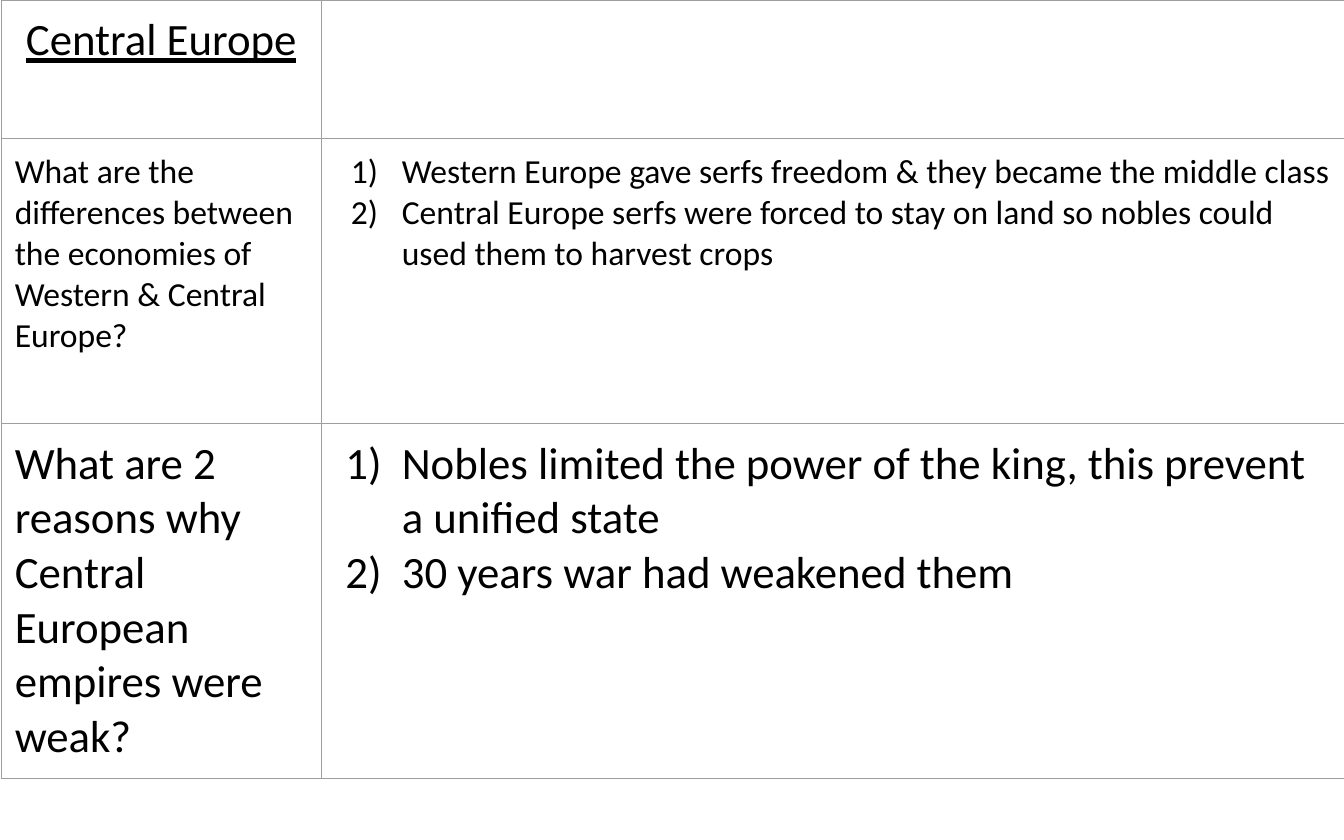
"""Build a study-notes slide about Central Europe."""
from lxml import etree
from pptx import Presentation
from pptx import util as u
from pptx.dml.color import RGBColor
from pptx.enum import text
from pptx.oxml.ns import qn

FONT = "Calibri"
INK = "000000"
RULE = "9E9E9E"
COLUMN_WIDTHS = [2.38, 7.64]
ROW_HEIGHTS = [1.03, 2.12, 2.46]
NOTES = [
    (
        "What are the differences between the economies of Western & Central Europe?",
        [
            "Western Europe gave serfs freedom & they became the middle class",
            "Central Europe serfs were forced to stay on land so nobles could used them to harvest crops",
        ],
        18,
        0.38,
    ),
    (
        "What are 2 reasons why Central European empires were weak?",
        [
            "Nobles limited the power of the king, this prevent a unified state",
            "30 years war had weakened them",
        ],
        24,
        0.42,
    ),
]


def color(code):
    """Turn a hex string into a colour."""
    return RGBColor.from_string(code)


def write(para, words, size=18, underline=False, align=text.PP_ALIGN.LEFT):
    """Put formatted words into a paragraph."""
    para.alignment = align
    span = para.add_run()
    span.text = words
    span.font.name = FONT
    span.font.size = u.Pt(size)
    span.font.underline = underline
    span.font.color.rgb = color(INK)


def number(para, hang):
    """Give a paragraph an automatic number with a hanging indent."""
    props = para._p.get_or_add_pPr()
    props.set("marL", str(u.Inches(0.5)))
    props.set("indent", str(-u.Inches(hang)))
    etree.SubElement(props, qn("a:buFont"), typeface=FONT)
    etree.SubElement(props, qn("a:buAutoNum"), type="arabicParenR")


def write_list(cell, items, size, hang):
    """Fill a cell with a numbered list."""
    frame = cell.text_frame
    for index, item in enumerate(items):
        para = frame.add_paragraph() if index else frame.paragraphs[0]
        write(para, item, size=size)
        number(para, hang)


def style_cell(cell):
    """Set the margins, borders and empty fill of a cell."""
    cell.margin_left = cell.margin_right = u.Inches(0.1)
    cell.margin_top = cell.margin_bottom = u.Inches(0.1)
    props = cell._tc.get_or_add_tcPr()
    for side in ("lnL", "lnR", "lnT", "lnB"):
        line = etree.SubElement(props, qn(f"a:{side}"), w=str(u.Pt(0.75)))
        fill = etree.SubElement(line, qn("a:solidFill"))
        etree.SubElement(fill, qn("a:srgbClr"), val=RULE)
    cell.fill.background()


def add_grid(page):
    """Add the ruled table and return it."""
    grid = page.shapes.add_table(
        len(ROW_HEIGHTS), len(COLUMN_WIDTHS), u.Inches(0.01), u.Inches(0),
        u.Inches(sum(COLUMN_WIDTHS)), u.Inches(sum(ROW_HEIGHTS)),
    ).table
    grid.first_row = grid.horz_banding = False
    for column, width in zip(grid.columns, COLUMN_WIDTHS):
        column.width = u.Inches(width)
    for row, height in zip(grid.rows, ROW_HEIGHTS):
        row.height = u.Inches(height)
    for cell in grid.iter_cells():
        style_cell(cell)
    return grid


def main():
    """Build and save the deck."""
    deck = Presentation()
    deck.slide_width, deck.slide_height = u.Inches(10), u.Inches(6.25)
    page = deck.slides.add_slide(deck.slide_layouts[6])
    grid = add_grid(page)
    heading = grid.cell(0, 0).text_frame.paragraphs[0]
    write(heading, "Central Europe", size=24, underline=True, align=text.PP_ALIGN.CENTER)
    for row, (question, answers, size, hang) in enumerate(NOTES, start=1):
        write(grid.cell(row, 0).text_frame.paragraphs[0], question, size=size)
        write_list(grid.cell(row, 1), answers, size, hang)
    deck.save("out.pptx")


if __name__ == "__main__":
    main()
